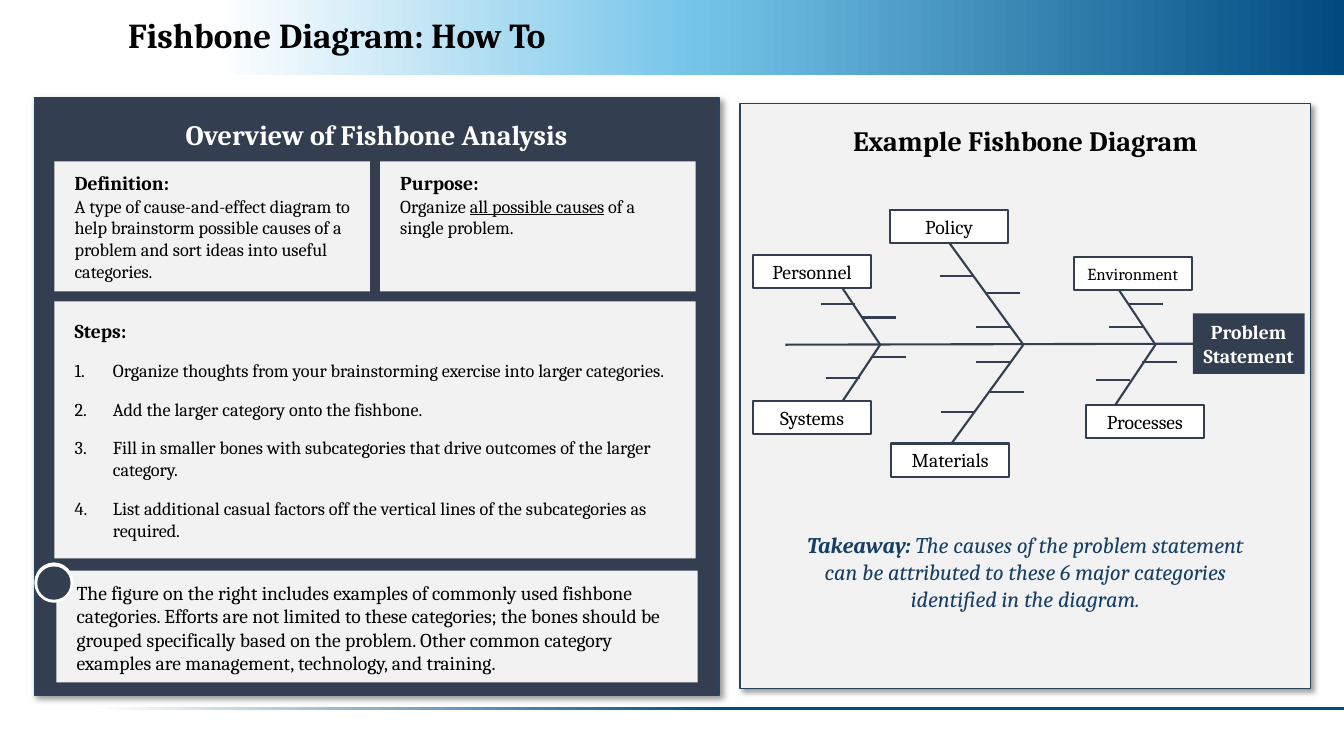
from lxml.etree import SubElement
from pptx import Presentation
from pptx.dml.color import RGBColor
from pptx.enum.shapes import MSO_CONNECTOR, MSO_SHAPE
from pptx.enum.text import MSO_ANCHOR, MSO_AUTO_SIZE, PP_ALIGN
from pptx.oxml.ns import qn
from pptx.util import Inches, Pt

NAVY, PALE, EDGE = "333F50", "F2F2F2", "28445D"
WHITE, BLACK, TAKEAWAY = "FFFFFF", "000000", "173E64"
PANEL_INSETS = (0.2, 0.2, 0.2, 0.2)
CARD_INSETS = (0.2, 0.1, 0.2, 0.2)


def color(value):
    return RGBColor.from_string(value)


def add_span(para, text, size=14, ink=BLACK, bold=False, italic=False, underline=False):
    span = para.add_run()
    span.text = text
    font = span.font
    font.name, font.size = "Cambria", Pt(size)
    font.bold, font.italic, font.underline = bold, italic, underline
    font.color.rgb = color(ink)


def set_bullet(para, numbered):
    properties = para._p.get_or_add_pPr()
    indent = Inches(0.38) if numbered else 0
    properties.set("marL", str(indent))
    properties.set("indent", str(-indent))
    if numbered:
        SubElement(properties, qn("a:buFont"), typeface="+mj-lt")
        SubElement(properties, qn("a:buAutoNum"), type="arabicPeriod")
    else:
        SubElement(properties, qn("a:buNone"))


class FishbonePage:
    def __init__(self, deck):
        self.page = deck.slides.add_slide(deck.slide_layouts[1])
        self.shapes = self.page.shapes

    def place(self, box, area):
        box.left, box.top, box.width, box.height = map(Inches, area)
        box._element.getparent().append(box._element)

    def paint(self, box, fill, line=None, width=1.5):
        box.fill.solid()
        box.fill.fore_color.rgb = color(fill)
        if line:
            box.line.color.rgb = color(line)
            box.line.width = Pt(width)
        else:
            box.line.fill.background()

    def set_text(self, box, paras, align=PP_ALIGN.LEFT, anchor=MSO_ANCHOR.TOP,
                 insets=(0.1, 0.05, 0.1, 0.05), after=0, spacing=1.0):
        frame = box.text_frame
        frame.word_wrap = True
        frame.auto_size = MSO_AUTO_SIZE.NONE
        frame.vertical_anchor = anchor
        (frame.margin_left, frame.margin_top,
         frame.margin_right, frame.margin_bottom) = map(Inches, insets)
        for index, spans in enumerate(paras):
            para = frame.add_paragraph() if index else frame.paragraphs[0]
            para.alignment = align
            para.space_before, para.space_after = Pt(0), Pt(after)
            para.line_spacing = spacing
            for text, style in spans:
                add_span(para, text, **style)
        return frame

    def title(self, area, text):
        box = self.shapes.title
        self.place(box, area)
        self.set_text(box, [[(text, {"size": 25, "bold": True})]],
                      anchor=MSO_ANCHOR.MIDDLE, spacing=0.9)

    def steps(self, area, heading, items):
        box = self.page.placeholders[1]
        self.place(box, area)
        self.paint(box, PALE)
        paras = [[(heading, {"bold": True})]]
        paras += [[(item, {"size": 13})] for item in items]
        frame = self.set_text(box, paras, anchor=MSO_ANCHOR.MIDDLE,
                              insets=PANEL_INSETS, after=12)
        for index, para in enumerate(frame.paragraphs):
            set_bullet(para, numbered=index > 0)

    def shape(self, area, fill, line=None, width=1.5, kind=MSO_SHAPE.RECTANGLE):
        box = self.shapes.add_shape(kind, *map(Inches, area))
        box.shadow.inherit = False
        self.paint(box, fill, line, width)
        return box

    def gradient(self, area, stops):
        box = self.shape(area, WHITE)
        box.fill.gradient()
        box.fill.gradient_angle = 0
        stop_list = box._element.spPr.find(qn("a:gradFill")).find(qn("a:gsLst"))
        for stop in list(stop_list):
            stop_list.remove(stop)
        for position, value in stops:
            stop = SubElement(stop_list, qn("a:gs"), pos=str(position * 1000))
            SubElement(stop, qn("a:srgbClr"), val=value)

    def panel(self, area, heading, fill, ink):
        box = self.shape(area, fill, EDGE, 1)
        effects = box._element.spPr.find(qn("a:effectLst"))
        shadow = SubElement(effects, qn("a:outerShdw"), blurRad=str(Pt(4)),
                            dist=str(Pt(3)), dir=str(45 * 60000),
                            algn="tl", rotWithShape="0")
        shade = SubElement(shadow, qn("a:srgbClr"), val=BLACK)
        SubElement(shade, qn("a:alpha"), val="40000")
        self.set_text(box, [[(heading, {"size": 20, "ink": ink, "bold": True})]],
                      align=PP_ALIGN.CENTER, insets=PANEL_INSETS, after=12)

    def card(self, area, paras):
        self.set_text(self.shape(area, PALE), paras, insets=CARD_INSETS)

    def label(self, area, text, fill=WHITE, line=NAVY, **style):
        self.set_text(self.shape(area, fill, line), [[(text, style)]],
                      align=PP_ALIGN.CENTER, anchor=MSO_ANCHOR.MIDDLE)

    def note(self, area, spans):
        box = self.shapes.add_textbox(*map(Inches, area))
        self.set_text(box, [spans], align=PP_ALIGN.CENTER)

    def bone(self, *ends):
        line = self.shapes.add_connector(MSO_CONNECTOR.STRAIGHT, *map(Inches, ends))
        line.line.color.rgb = color(NAVY)
        line.line.width = Pt(1.5)
        SubElement(line._element.spPr, qn("a:effectLst"))


def main():
    deck = Presentation()
    deck.slide_width, deck.slide_height = Inches(13.33), Inches(7.5)
    page = FishbonePage(deck)

    page.gradient((0, 0, 13.33, 0.74), [(16, WHITE), (52, "74C4E9"), (100, "004A80")])
    page.gradient((0.95, 7.01, 12.38, 0.03), [(0, WHITE), (50, "004D86")])
    page.title((1.17, 0, 12.16, 0.74), "Fishbone Diagram: How To")

    page.panel((7.34, 1.03, 5.66, 5.8), "Example Fishbone Diagram", PALE, BLACK)
    takeaway = {"size": 16, "ink": TAKEAWAY, "italic": True}
    page.note((7.76, 5.22, 4.82, 0.91), [
        ("Takeaway: ", {**takeaway, "bold": True}),
        ("The causes of the problem statement can be attributed to these "
         "6 major categories identified in the diagram.", takeaway)])

    page.panel((0.34, 0.97, 6.79, 5.93), "Overview of Fishbone Analysis", NAVY, WHITE)
    heading, detail = {"bold": True}, {"size": 13}
    page.card((0.54, 1.6, 3.13, 1.29), [
        [("Definition:", heading)],
        [("A type of cause-and-effect diagram to help brainstorm possible causes "
          "of a problem and sort ideas into useful categories.", detail)]])
    page.card((3.77, 1.6, 3.13, 1.29), [
        [("Purpose:", heading)],
        [("Organize ", detail),
         ("all possible causes", {**detail, "underline": True}),
         (" of a single problem.", detail)]])
    page.steps((0.54, 2.99, 6.36, 2.55), "Steps:", [
        "Organize thoughts from your brainstorming exercise into larger categories.",
        "Add the larger category onto the fishbone.",
        "Fill in smaller bones with subcategories that drive outcomes of the larger category.",
        "List additional casual factors off the vertical lines of the subcategories as required."])
    page.card((0.56, 5.66, 6.36, 1.11), [[(
        "The figure on the right includes examples of commonly used fishbone categories. "
        "Efforts are not limited to these categories; the bones should be grouped "
        "specifically based on the problem. Other common category examples are "
        "management, technology, and training.", {})]])

    spine = 3.42
    page.bone(7.79, spine, 11.83, 3.41)
    for joint, reach, rise in [(8.73, 0.4, 0.6), (10.15, 0.8, 1.1), (11.46, 0.4, 0.6)]:
        for tip in (spine - rise, spine + rise):
            page.bone(joint - reach, tip, joint, spine)

    page.label((11.83, 3.11, 1.11, 0.6), "Problem Statement",
               fill=NAVY, line=None, ink=WHITE, bold=True)
    for left, top, text, size in [
            (8.83, 2.08, "Policy", 14), (7.47, 2.53, "Personnel", 14),
            (10.65, 2.55, "Environment", 12), (8.84, 4.4, "Materials", 14),
            (10.77, 4.02, "Processes", 14), (7.47, 3.98, "Systems", 14)]:
        page.label((left, top, 1.17, 0.33), text, size=size)

    for left, height in [
            (8.55, 3.15), (8.14, 3.02), (9.32, 2.74), (9.78, 2.91), (9.68, 3.24),
            (11.19, 3.02), (11, 3.24), (11.33, 3.59), (10.87, 3.77), (9.68, 3.59),
            (9.82, 3.89), (9.33, 4.09), (8.65, 3.54), (8.19, 3.75)]:
        page.bone(left, height, left + 0.34, height)

    page.shape((0.34, 5.58, 0.39, 0.4), WHITE, kind=MSO_SHAPE.OVAL)
    page.shape((0.37, 5.62, 0.33, 0.33), NAVY, kind=MSO_SHAPE.OVAL)
    deck.save("out.pptx")


if __name__ == "__main__":
    main()
